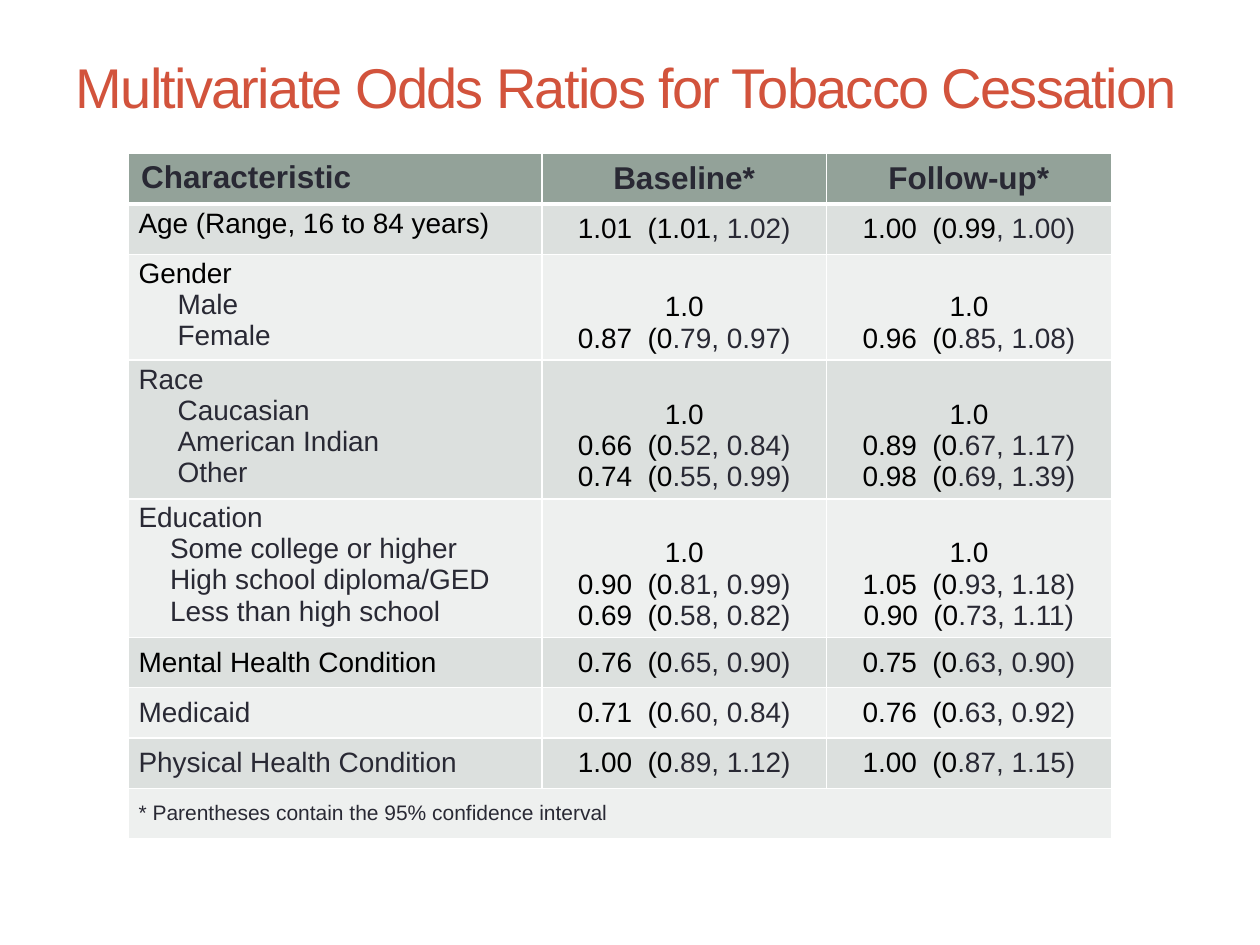
from lxml.etree import SubElement
from pptx import Presentation
from pptx.dml.color import RGBColor
from pptx.enum.text import MSO_ANCHOR, MSO_AUTO_SIZE, PP_ALIGN
from pptx.oxml.ns import qn
from pptx.util import Inches, Pt

INK, BLACK, WHITE = "292934", "000000", "FFFFFF"
ACCENT, HEADER_FILL = "D2533C", "93A299"
BAND_FILLS = ["DCE0DE", "EEF0EF"]
FONT = "Arial"
COLUMN_WIDTHS = [3.28, 2.26, 2.26]
HEADINGS = ["Characteristic", "Baseline*", "Follow-up*"]
FOOTNOTE = "* Parentheses contain the 95% confidence interval"

SINGLE = {"height": 0.4, "label_anchor": MSO_ANCHOR.MIDDLE, "value_anchor": MSO_ANCHOR.MIDDLE}
TOP_SINGLE = SINGLE | {"label_anchor": MSO_ANCHOR.TOP}
GROUP = {"height": 1.1, "label_anchor": MSO_ANCHOR.TOP, "value_anchor": MSO_ANCHOR.BOTTOM}
SHORT_GROUP = GROUP | {"height": 0.84}

# "|" marks where a value changes from black to ink
ROWS = [
    (TOP_SINGLE, ["Age (Range, 16 to 84 years)"], BLACK, 0,
     ["1.01  (1.01|, 1.02)"], ["1.00  (0.99|, 1.00)"]),
    (SHORT_GROUP, ["Gender", "Male", "Female"], BLACK, 0.31,
     ["1.0", "0.87  (0|.79, 0.97)"], ["1.0", "0.96  (0|.85, 1.08)"]),
    (GROUP, ["Race", "Caucasian", "American Indian", "Other"], INK, 0.31,
     ["1.0", "0.66  (0|.52, 0.84)", "0.74  (0|.55, 0.99)"],
     ["1.0", "0.89  (0|.67, 1.17)", "0.98  (0|.69, 1.39)"]),
    (GROUP, ["Education", "Some college or higher", "High school diploma/GED",
             "Less than high school"], INK, 0.25,
     ["1.0", "0.90  (0|.81, 0.99)", "0.69  (0|.58, 0.82)"],
     ["1.0", "1.05  (0|.93, 1.18)", "0.90  (0|.73, 1.11)"]),
    (SINGLE, ["Mental Health Condition"], BLACK, 0,
     ["0.76  (0|.65, 0.90)"], ["0.75  (0|.63, 0.90)"]),
    (SINGLE, ["Medicaid"], INK, 0, ["0.71  (0|.60, 0.84)"], ["0.76  (0|.63, 0.92)"]),
    (SINGLE, ["Physical Health Condition"], INK, 0,
     ["1.00  (0|.89, 1.12)"], ["1.00  (0|.87, 1.15)"]),
]


def color(hex_value):
    return RGBColor.from_string(hex_value)


def set_borders(cell, bottom_width=1):
    properties = cell._tc.get_or_add_tcPr()
    widths = {"a:lnL": 1, "a:lnR": 1, "a:lnT": 1, "a:lnB": bottom_width}
    for position, (tag, width) in enumerate(widths.items()):
        line = SubElement(properties, qn(tag), w=str(Pt(width)))
        fill = SubElement(line, qn("a:solidFill"))
        SubElement(fill, qn("a:srgbClr"), val=WHITE)
        properties.insert(position, line)


def style_cell(cell, fill, anchor, margins=(0.08, 0.03), bottom_width=1):
    cell.fill.solid()
    cell.fill.fore_color.rgb = color(fill)
    cell.vertical_anchor = anchor
    horizontal, vertical = margins
    cell.margin_left = cell.margin_right = Inches(horizontal)
    cell.margin_top = cell.margin_bottom = Inches(vertical)
    set_borders(cell, bottom_width)


def write_lines(cell, lines, size=16, bold=False, alignment=PP_ALIGN.LEFT):
    frame = cell.text_frame
    for index, (runs, indent) in enumerate(lines):
        paragraph = frame.add_paragraph() if index else frame.paragraphs[0]
        paragraph.alignment = alignment
        paragraph.font.name, paragraph.font.size = FONT, Pt(size)
        paragraph.font.bold = bold
        if indent:
            paragraph._p.get_or_add_pPr().set("marL", str(Inches(indent)))
        for text, text_color in runs:
            run = paragraph.add_run()
            run.text = text
            run.font.color.rgb = color(text_color)


def label_lines(labels, heading_color, indent):
    heading, *members = labels
    return [([(heading, heading_color)], 0)] + [([(member, INK)], indent) for member in members]


def value_lines(values):
    return [(list(zip(value.split("|"), (BLACK, INK))), 0) for value in values]


def add_title(slide, text, left, top, width, height):
    title = slide.shapes.title
    title.left, title.top, title.width, title.height = map(Inches, (left, top, width, height))
    frame = title.text_frame
    frame.text = text
    frame.word_wrap = True
    frame.auto_size = MSO_AUTO_SIZE.NONE
    frame.vertical_anchor = MSO_ANCHOR.MIDDLE
    paragraph = frame.paragraphs[0]
    paragraph.alignment = PP_ALIGN.LEFT
    paragraph.font.name, paragraph.font.size = FONT, Pt(32)
    paragraph.font.color.rgb = color(ACCENT)
    paragraph.runs[0].font._element.set("spc", "-100")


def add_odds_table(slide, left, top, width, height):
    table = slide.shapes.add_table(
        len(ROWS) + 2, len(HEADINGS), *map(Inches, (left, top, width, height))).table
    for column, share in zip(table.columns, COLUMN_WIDTHS):
        column.width = Inches(width * share / sum(COLUMN_WIDTHS))
    heights = [0.4] + [row[0]["height"] for row in ROWS] + [0.4]
    for table_row, row_height in zip(table.rows, heights):
        table_row.height = Inches(height * row_height / sum(heights))

    for index, heading in enumerate(HEADINGS):
        cell = table.cell(0, index)
        style_cell(cell, HEADER_FILL, MSO_ANCHOR.MIDDLE if index else MSO_ANCHOR.TOP,
                   (0.1, 0.05), bottom_width=3)
        write_lines(cell, [([(heading, INK)], 0)], 18, True,
                    PP_ALIGN.CENTER if index else PP_ALIGN.LEFT)

    for number, (layout, labels, heading_color, indent, *results) in enumerate(ROWS, 1):
        fill = BAND_FILLS[(number - 1) % 2]
        label_cell = table.cell(number, 0)
        style_cell(label_cell, fill, layout["label_anchor"])
        write_lines(label_cell, label_lines(labels, heading_color, indent))
        for index, values in enumerate(results, 1):
            cell = table.cell(number, index)
            style_cell(cell, fill, layout["value_anchor"])
            if layout["value_anchor"] == MSO_ANCHOR.BOTTOM:
                cell.margin_bottom = Inches(0.05)
            write_lines(cell, value_lines(values), alignment=PP_ALIGN.CENTER)

    last = len(ROWS) + 1
    footnote = table.cell(last, 0)
    footnote.merge(table.cell(last, len(HEADINGS) - 1))
    style_cell(footnote, BAND_FILLS[len(ROWS) % 2], MSO_ANCHOR.MIDDLE)
    write_lines(footnote, [([(FOOTNOTE, INK)], 0)], 12)


def main():
    presentation = Presentation()
    presentation.slide_width, presentation.slide_height = Inches(10), Inches(7.5)
    slide = presentation.slides.add_slide(presentation.slide_layouts[5])
    add_title(slide, "Multivariate Odds Ratios for Tobacco Cessation", 0.5, 0.14, 9, 1.08)
    add_odds_table(slide, 1.02, 1.22, 7.8, 5.44)
    presentation.save("out.pptx")


if __name__ == "__main__":
    main()
